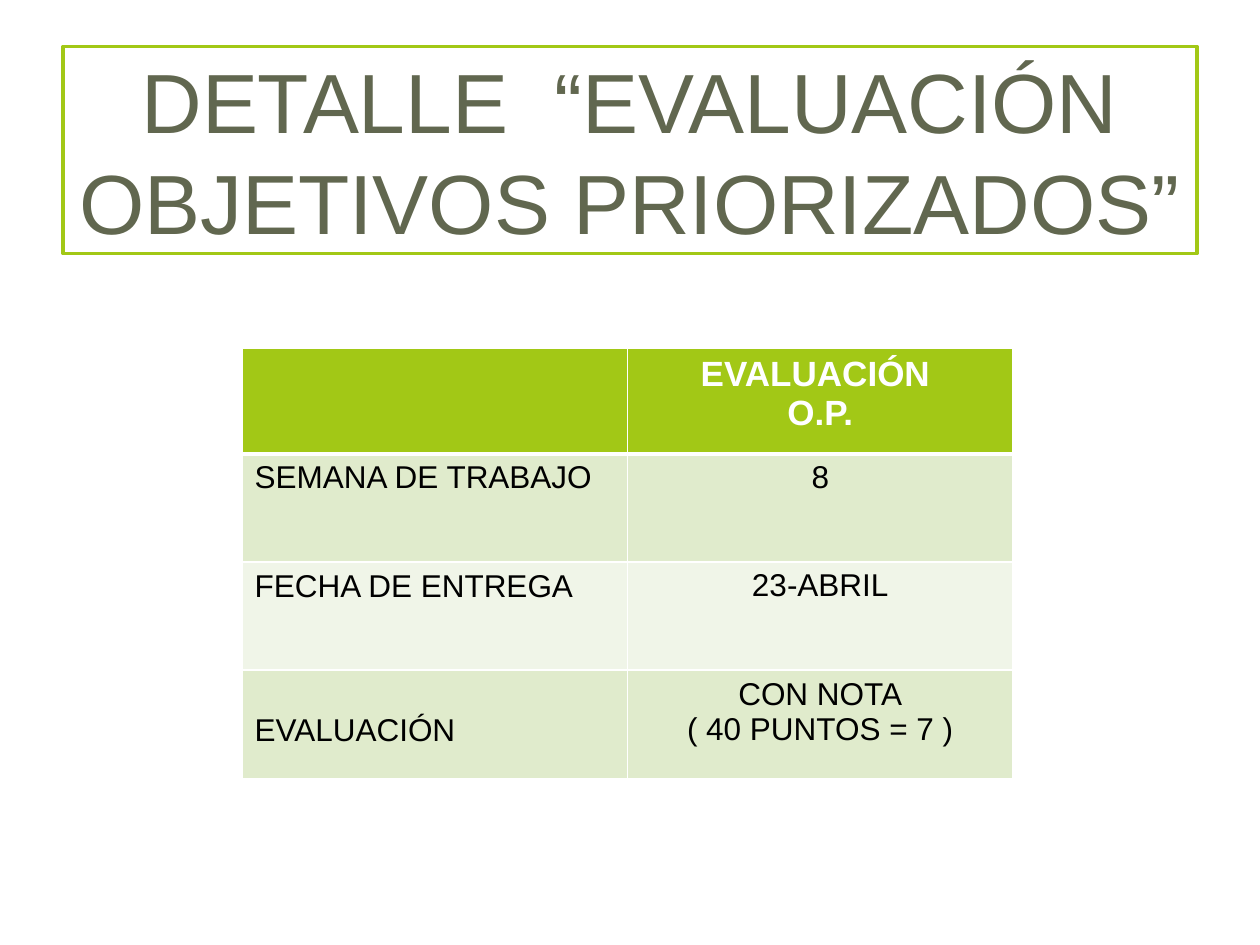
"""Build the assessment detail slide: a framed title above a two-column table."""
from dataclasses import dataclass

from lxml.etree import SubElement
from pptx import Presentation
from pptx.dml.color import RGBColor
from pptx.enum.text import MSO_ANCHOR, MSO_AUTO_SIZE, PP_ALIGN as Align
from pptx.oxml.ns import qn
from pptx.util import Cm, Pt

GREEN, WHITE, BLACK, OLIVE = "A2C816", "FFFFFF", "000000", "61674F"
BANDS = ("E0EBCC", "F0F5E8")


@dataclass
class Row:
    label: str
    value: str
    fill: str
    height: float = 2.18
    size: int = 18
    color: str = BLACK
    bold: bool = False
    label_top: float = 0.13
    top_line: int = 1
    bottom_line: int = 1


ROWS = [
    Row("", "EVALUACIÓN \nO.P.", GREEN, height=2.13, size=20, color=WHITE,
        bold=True, bottom_line=3),
    Row("SEMANA DE TRABAJO", "8", BANDS[0], top_line=3),
    Row("FECHA DE ENTREGA", "23-ABRIL", BANDS[1]),
    Row("EVALUACIÓN", "CON NOTA\n( 40 PUNTOS = 7 )", BANDS[0], label_top=0.86),
]


def rgb(value: str) -> RGBColor:
    return RGBColor.from_string(value)


def paint(target, color: str) -> None:
    target.fill.solid()
    target.fill.fore_color.rgb = rgb(color)


def write(frame, text: str, *, size: int, color: str, bold: bool = False,
          align: Align = Align.CENTER) -> None:
    frame.word_wrap = True
    for index, line in enumerate(text.split("\n")):
        para = frame.add_paragraph() if index else frame.paragraphs[0]
        para.alignment = align
        span = para.add_run()
        span.text = line
        span.font.name = "Arial"
        span.font.size = Pt(size)
        span.font.bold = bold
        span.font.color.rgb = rgb(color)


def add_borders(cell, row: Row) -> None:
    properties = cell._tc.get_or_add_tcPr()
    widths = {"lnL": 1, "lnR": 1, "lnT": row.top_line, "lnB": row.bottom_line}
    for index, (side, width) in enumerate(widths.items()):
        line = SubElement(properties, qn(f"a:{side}"), w=str(int(Pt(width))))
        fill = SubElement(line, qn("a:solidFill"))
        SubElement(fill, qn("a:srgbClr"), val=WHITE)
        properties.insert(index, line)


def draw_title(page) -> None:
    box = page.shapes.title
    box.left, box.top, box.width, box.height = Cm(1.27), Cm(0.94), Cm(22.86), Cm(4.17)
    paint(box, WHITE)
    box.line.color.rgb = rgb(GREEN)
    box.line.width = Pt(2)
    frame = box.text_frame
    frame.auto_size = MSO_AUTO_SIZE.NONE
    frame.vertical_anchor = MSO_ANCHOR.MIDDLE
    write(frame, "DETALLE  “EVALUACIÓN OBJETIVOS PRIORIZADOS”", size=48, color=OLIVE)


def draw_table(page, rows: list[Row]) -> None:
    height = sum(row.height for row in rows)
    table = page.shapes.add_table(
        len(rows), 2, Cm(4.88), Cm(7.02), Cm(15.54), Cm(height)).table
    for index, row in enumerate(rows):
        table.rows[index].height = Cm(row.height)
        label, value = table.rows[index].cells
        label.margin_top = Cm(row.label_top)
        for cell, text, align in ((label, row.label, Align.LEFT),
                                  (value, row.value, Align.CENTER)):
            paint(cell, row.fill)
            add_borders(cell, row)
            write(cell.text_frame, text, size=row.size, color=row.color,
                  bold=row.bold, align=align)


def main() -> None:
    deck = Presentation()
    deck.slide_width, deck.slide_height = Cm(25.4), Cm(19.05)
    page = deck.slides.add_slide(deck.slide_layouts.get_by_name("Title Only"))
    paint(page.background, WHITE)
    draw_title(page)
    draw_table(page, ROWS)
    deck.save("out.pptx")


if __name__ == "__main__":
    main()
